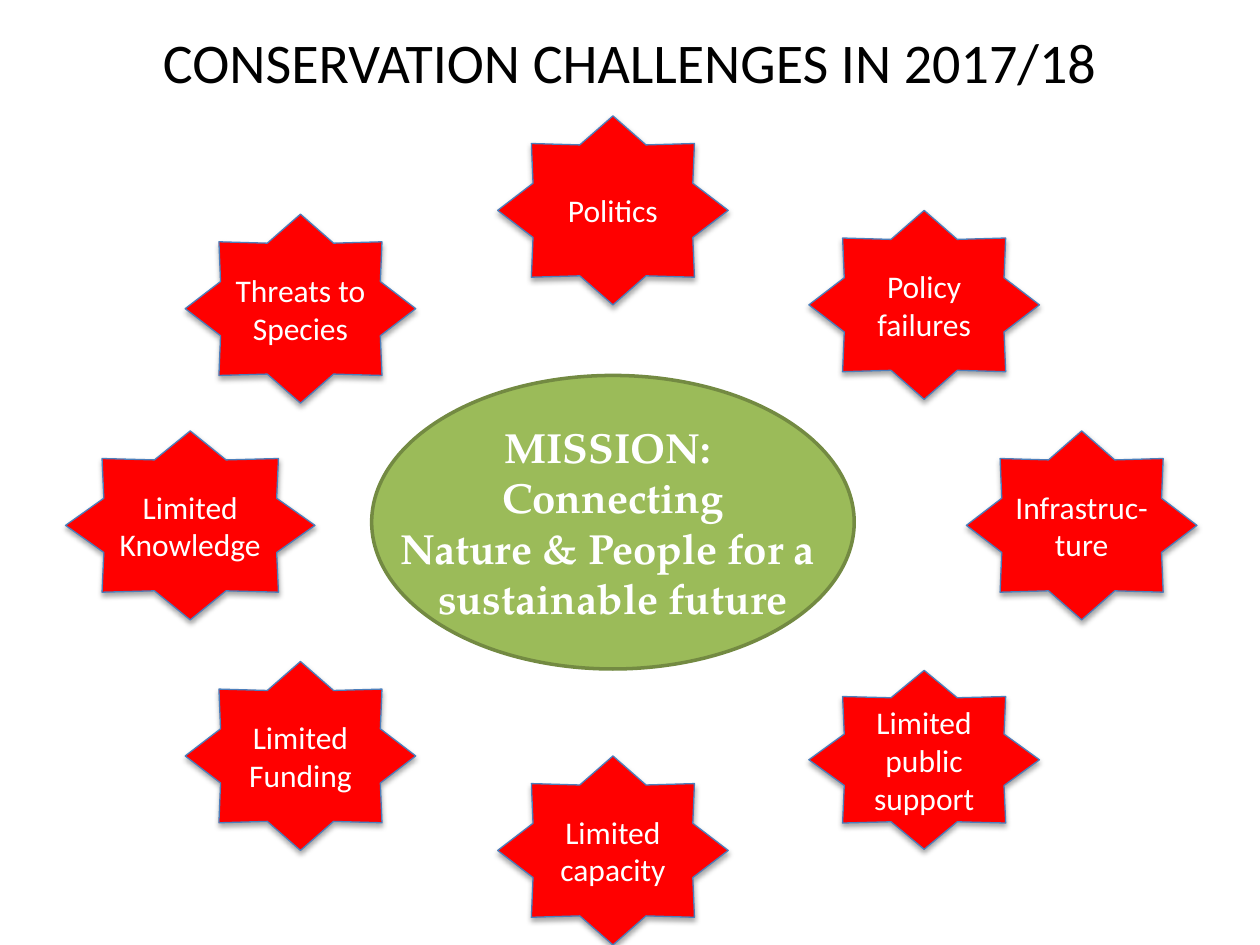
from lxml import etree
from pptx import Presentation
from pptx.dml.color import RGBColor
from pptx.enum.shapes import MSO_SHAPE
from pptx.enum.text import MSO_ANCHOR, PP_ALIGN
from pptx.oxml.ns import qn
from pptx.util import Inches, Pt

STAR = MSO_SHAPE.STAR_8_POINT
OVAL = MSO_SHAPE.OVAL
MIDDLE = MSO_ANCHOR.MIDDLE
CENTER = PP_ALIGN.CENTER

BLACK = RGBColor(0x00, 0x00, 0x00)
WHITE = RGBColor(0xFF, 0xFF, 0xFF)
RED = RGBColor(0xFF, 0x00, 0x00)
BLUE = RGBColor(0x4B, 0x7E, 0xBC)
GREEN = RGBColor(0x9B, 0xBB, 0x59)
OLIVE = RGBColor(0x73, 0x8A, 0x42)

SANS = "Calibri"
SERIF = "TeX Gyre Pagella"

LEFT, MID, RIGHT = 1.47, 3.95, 6.42
WIDE, HIGH = 1.83, 1.5
STARS = [
    ("Limited Funding", LEFT, 5.25, WIDE, HIGH),
    ("Infrastruc-ture", 7.67, 3.42, WIDE, HIGH),
    ("Limited public support", RIGHT, 5.32, WIDE, 1.42),
    ("Threats to Species", LEFT, 1.7, WIDE, HIGH),
    ("Policy failures", RIGHT, 1.67, WIDE, HIGH),
    ("Limited capacity", MID, 6, WIDE, HIGH),
    ("Limited Knowledge", 0.52, 3.42, 1.98, HIGH),
    ("Politics", MID, 0.92, WIDE, HIGH),
]
MISSION = "MISSION: \nConnecting\nNature & People for a \nsustainable future"


class Deck:
    def __init__(self):
        self.prs = Presentation()
        self.prs.slide_width = Inches(10)
        self.prs.slide_height = Inches(7.5)
        self.slide = self.prs.slides.add_slide(self.prs.slide_layouts[6])

    def label(self, shape, text, size, color, font=SANS, bold=False, wrap=True):
        frame = shape.text_frame
        frame.text = text
        frame.word_wrap = wrap
        frame.vertical_anchor = MIDDLE
        for para in frame.paragraphs:
            para.alignment = CENTER
            for run in para.runs:
                run.font.name = font
                run.font.size = Pt(size)
                run.font.bold = bold
                run.font.color.rgb = color

    def title(self, text, *box):
        shape = self.slide.shapes.add_textbox(*map(Inches, box))
        self.label(shape, text, 32, BLACK)

    def shape(self, kind, box, fill, line, width):
        shape = self.slide.shapes.add_shape(kind, *map(Inches, box))
        shape.fill.solid()
        shape.fill.fore_color.rgb = fill
        shape.line.color.rgb = line
        shape.line.width = Pt(width)
        shape.shadow.inherit = False
        return shape

    def shade(self, shape):
        effects = shape._element.spPr.find(qn("a:effectLst"))
        shadow = etree.SubElement(
            effects, qn("a:outerShdw"), blurRad=str(Pt(3.1)),
            dist=str(Pt(1.8)), dir="5400000", rotWithShape="0")
        color = etree.SubElement(shadow, qn("a:srgbClr"), val=str(BLACK))
        etree.SubElement(color, qn("a:alpha"), val="35000")

    def star(self, text, *box):
        shape = self.shape(STAR, box, RED, BLUE, 0.75)
        self.shade(shape)
        self.label(shape, text, 18, WHITE)

    def oval(self, text, *box):
        shape = self.shape(OVAL, box, GREEN, OLIVE, 2)
        self.label(shape, text, 24, WHITE, SERIF, bold=True, wrap=False)


def main():
    deck = Deck()
    deck.title("CONSERVATION CHALLENGES IN 2017/18", 0.5, 0.07, 9, 0.83)
    for star in STARS:
        deck.star(*star)
    deck.oval(MISSION, 2.95, 2.98, 3.83, 2.33)
    deck.prs.save("out.pptx")


if __name__ == "__main__":
    main()
